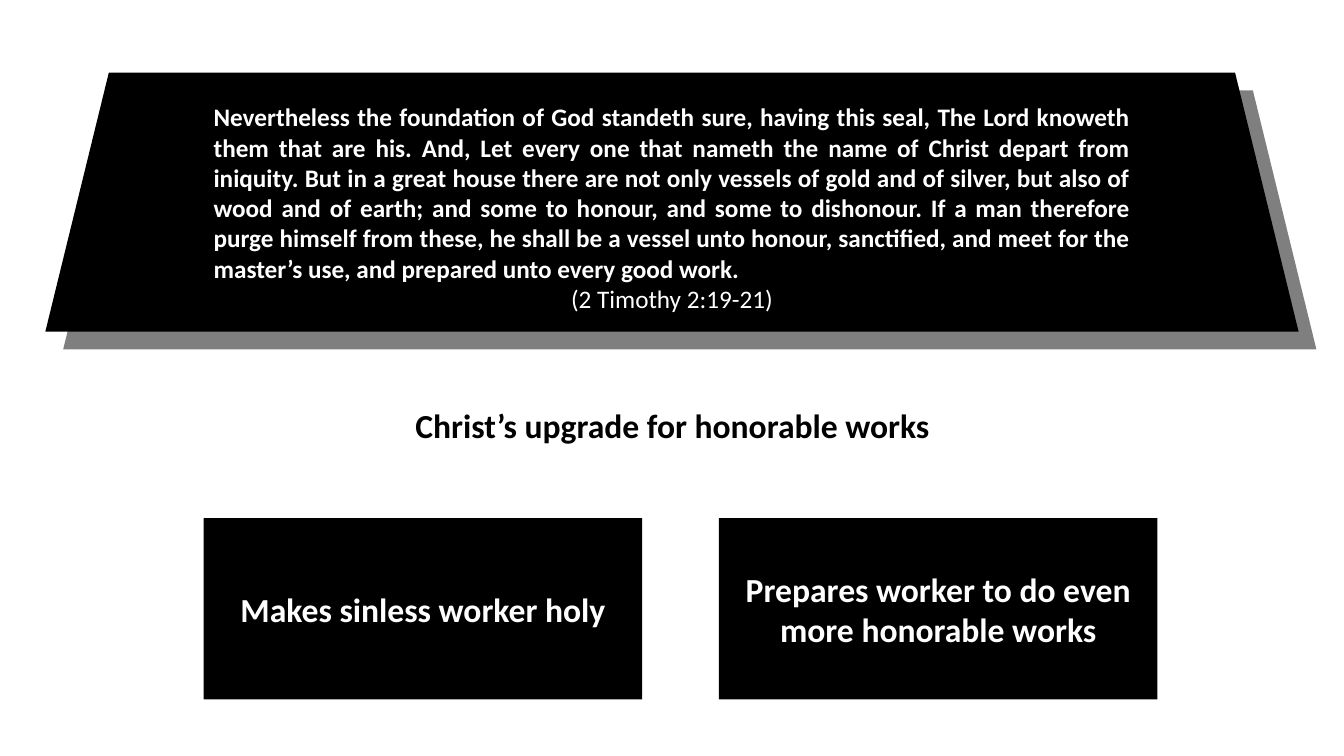
from lxml.etree import SubElement
from pptx import Presentation
from pptx.dml.color import RGBColor
from pptx.enum.shapes import MSO_SHAPE
from pptx.enum.text import MSO_ANCHOR, PP_ALIGN
from pptx.oxml.ns import qn
from pptx.util import Inches, Pt

BLACK, WHITE = "000000", "FFFFFF"
VERSE = (
    "Nevertheless the foundation of God standeth sure, having this seal, The Lord knoweth "
    "them that are his. And, Let every one that nameth the name of Christ depart from "
    "iniquity. But in a great house there are not only vessels of gold and of silver, but "
    "also of wood and of earth; and some to honour, and some to dishonour. If a man "
    "therefore purge himself from these, he shall be a vessel unto honour, sanctified, and "
    "meet for the master’s use, and prepared unto every good work."
)
REFERENCE = "(2 Timothy 2:19-21)"
HEADING = "Christ’s upgrade for honorable works"
BENEFITS = ["Makes sinless worker holy", "Prepares worker to do even more honorable works"]

SLIDE_W, SLIDE_H = 13.33, 7.5
LEFT = 2.02
PANEL_W, PANEL_H, PANEL_SLOPE = 12.43, 2.57, 0.63
BOX_W, BOX_H, BOX_GAP = 4.35, 1.8, 0.76


def color(value):
    return RGBColor.from_string(value)


def inches(*lengths):
    return [Inches(n) for n in lengths]


def add_filled(s, kind, box, fill):
    sp = s.shapes.add_shape(kind, *inches(*box))
    sp.shadow.inherit = False
    sp.fill.solid()
    sp.fill.fore_color.rgb = color(fill)
    sp.line.fill.background()
    return sp


def cast_shadow(sp):
    """Give the shape a sharp grey shadow down and to the right."""
    effects = sp._element.spPr.find(qn("a:effectLst"))
    shadow = SubElement(effects, qn("a:outerShdw"), blurRad="0", dist=str(Pt(18)),
                        dir="2700000", algn="tl", rotWithShape="0")
    tint = SubElement(shadow, qn("a:srgbClr"), val=BLACK)
    SubElement(tint, qn("a:alpha"), val="50000")


def write(p, text, size, ink, bold=True, align=PP_ALIGN.CENTER):
    p.alignment = align
    r = p.add_run()
    r.text = text
    r.font.name = "Calibri"
    r.font.size = Pt(size)
    r.font.bold = bold
    r.font.color.rgb = color(ink)


def main():
    prs = Presentation()
    prs.slide_width, prs.slide_height = inches(SLIDE_W, SLIDE_H)
    s = prs.slides.add_slide(prs.slide_layouts[5])

    title = s.shapes.title
    title.left, title.top, title.width, title.height = inches(3.86, 3.75, 5.62, 0.94)
    title.text_frame.vertical_anchor = MSO_ANCHOR.MIDDLE
    write(title.text_frame.paragraphs[0], HEADING, 24, BLACK)

    panel = add_filled(s, MSO_SHAPE.TRAPEZOID,
                       ((SLIDE_W - PANEL_W) / 2, 0.72, PANEL_W, PANEL_H), BLACK)
    panel.adjustments[0] = PANEL_SLOPE / PANEL_H
    cast_shadow(panel)

    tf = s.shapes.add_textbox(*inches(LEFT, 0.96, 9.29, 2.22)).text_frame
    tf.word_wrap = True
    write(tf.paragraphs[0], VERSE, 18, WHITE, align=PP_ALIGN.JUSTIFY)
    write(tf.add_paragraph(), REFERENCE, 18, WHITE, bold=False)

    for i, benefit in enumerate(BENEFITS):
        left = LEFT + i * (BOX_W + BOX_GAP)
        sp = add_filled(s, MSO_SHAPE.RECTANGLE, (left, 5.14, BOX_W, BOX_H), BLACK)
        sp.text_frame.word_wrap = True
        sp.text_frame.vertical_anchor = MSO_ANCHOR.MIDDLE
        write(sp.text_frame.paragraphs[0], benefit, 24, WHITE)

    prs.save("out.pptx")


if __name__ == "__main__":
    main()
